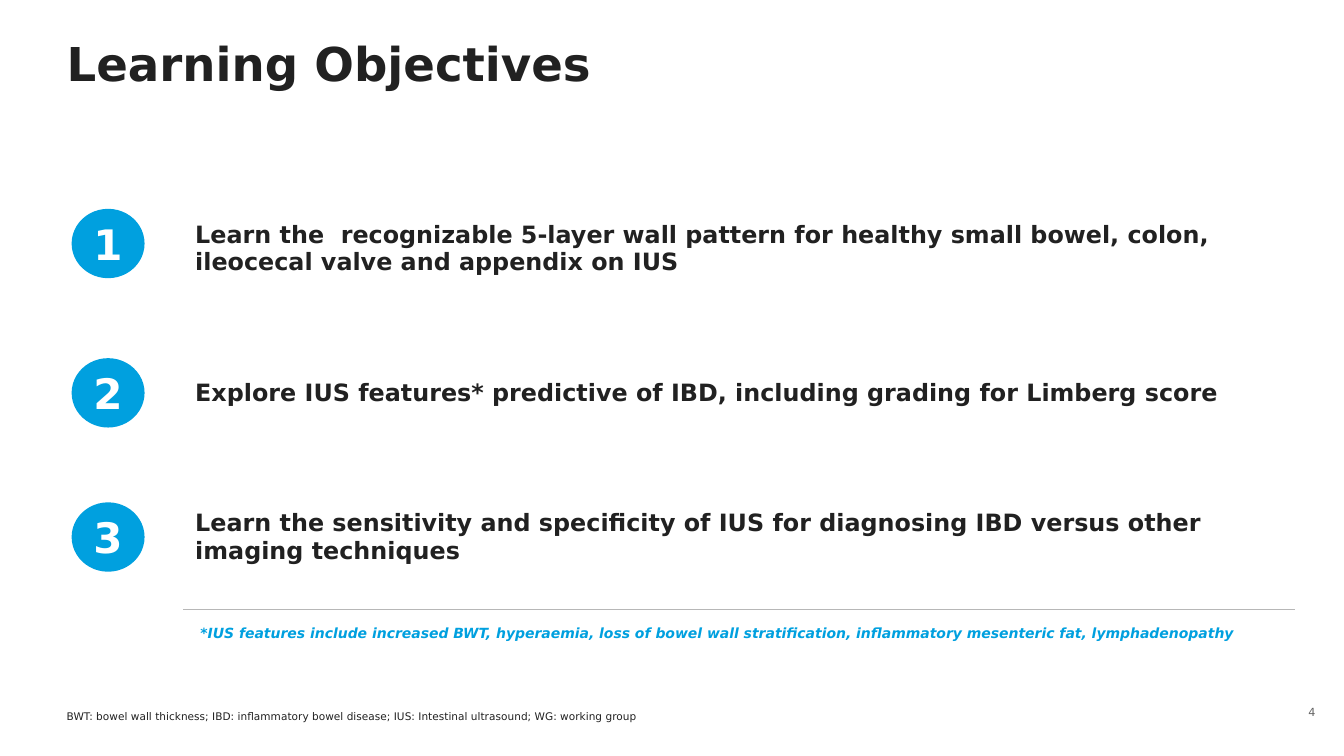
from lxml.etree import SubElement
from pptx import Presentation
from pptx.dml.color import RGBColor
from pptx.enum.shapes import MSO_SHAPE
from pptx.enum.text import MSO_ANCHOR as ANCHOR, PP_ALIGN as ALIGN
from pptx.oxml import parse_xml
from pptx.oxml.ns import nsdecls, qn
from pptx.util import Cm, Pt

FONT = "DejaVu Sans"
INK = RGBColor(0x21, 0x21, 0x21)
BLUE = RGBColor(0x00, 0xA0, 0xDF)
WHITE = RGBColor(0xFF, 0xFF, 0xFF)
PAGE_GREY = RGBColor(0x64, 0x64, 0x64)
RULE_GREY = RGBColor(0xB7, 0xB7, 0xB7)

BADGE_WIDTH, BADGE_HEIGHT = 1.75, 1.66
FIRST_BADGE_LIFT = 0.13

OBJECTIVES = [
    "Learn the  recognizable 5-layer wall pattern for healthy small bowel, colon, "
    "ileocecal valve and appendix on IUS",
    "Explore IUS features* predictive of IBD, including grading for Limberg score",
    "Learn the sensitivity and specificity of IUS for diagnosing IBD versus other "
    "imaging techniques",
]


def write(frame, text, size, color, bold=False, italic=False, align=ALIGN.LEFT):
    frame.text = text
    paragraph = frame.paragraphs[0]
    paragraph.alignment = align
    font = paragraph.runs[0].font
    font.name, font.size, font.bold, font.italic = FONT, Pt(size), bold, italic
    font.color.rgb = color
    return paragraph


def set_insets(target, left=0, top=0, right=0, bottom=0):
    """Set the margins of a text frame or table cell, in centimetres."""
    target.margin_left, target.margin_top = Cm(left), Cm(top)
    target.margin_right, target.margin_bottom = Cm(right), Cm(bottom)


def add_text_frame(slide, box, anchor=ANCHOR.TOP):
    frame = slide.shapes.add_textbox(*map(Cm, box)).text_frame
    frame.word_wrap = True
    frame.vertical_anchor = anchor
    return frame


def set_bottom_rule(cell):
    """Leave the cell with a grey rule below and no other border."""
    properties = cell._tc.get_or_add_tcPr()
    for position, side in enumerate(("lnL", "lnR", "lnT", "lnB")):
        border = parse_xml(f'<a:{side} {nsdecls("a")} w="{Pt(1)}"/>')
        if side == "lnB":
            fill = SubElement(border, qn("a:solidFill"))
            SubElement(fill, qn("a:srgbClr"), val=str(RULE_GREY))
        else:
            SubElement(border, qn("a:noFill"))
        properties.insert(position, border)


def add_title(slide, box):
    frame = add_text_frame(slide, box)
    set_insets(frame)
    write(frame, "Learning Objectives", 33.3, INK, bold=True).line_spacing = 0.9


def add_objectives(slide, box):
    table = slide.shapes.add_table(len(OBJECTIVES), 1, *map(Cm, box)).table
    table.first_row = table.horz_banding = False
    for row, objective in enumerate(OBJECTIVES):
        cell = table.cell(row, 0)
        cell.fill.background()
        cell.vertical_anchor = ANCHOR.MIDDLE
        set_insets(cell, 0.3, 0.1, 0.15, 0.1)
        write(cell.text_frame, objective, 17, INK, bold=True)
        set_bottom_rule(cell)


def add_badges(slide, box):
    """Place one numbered badge beside the middle of each objective."""
    left, top, width, height = box
    row_height = height / len(OBJECTIVES)
    for row in range(len(OBJECTIVES)):
        badge_top = top + (row + 0.5) * row_height - BADGE_HEIGHT / 2
        if row == 0:
            badge_top -= FIRST_BADGE_LIFT
        badge = slide.shapes.add_shape(
            MSO_SHAPE.OVAL, Cm(left + (width - BADGE_WIDTH) / 2), Cm(badge_top),
            Cm(BADGE_WIDTH), Cm(BADGE_HEIGHT))
        badge.shadow.inherit = False
        badge.fill.solid()
        badge.fill.fore_color.rgb = BLUE
        badge.line.color.rgb = BLUE
        badge.line.width = Pt(2.5)
        frame = badge.text_frame
        frame.word_wrap = False
        frame.vertical_anchor = ANCHOR.MIDDLE
        set_insets(frame)
        write(frame, str(row + 1), 30, WHITE, bold=True, align=ALIGN.CENTER)


def add_features_note(slide, box):
    frame = add_text_frame(slide, box)
    write(frame, "*IUS features include increased BWT, hyperaemia, loss of bowel wall "
          "stratification, inflammatory mesenteric fat, lymphadenopathy",
          10, BLUE, bold=True, italic=True)
    frame.word_wrap = False


def add_abbreviations(slide, box):
    frame = add_text_frame(slide, box, ANCHOR.BOTTOM)
    set_insets(frame)
    write(frame, "BWT: bowel wall thickness; IBD: inflammatory bowel disease; "
          "IUS: Intestinal ultrasound; WG: working group", 7.5, INK)


def add_page_number(slide, box):
    frame = add_text_frame(slide, box, ANCHOR.MIDDLE)
    write(frame, "4", 8, PAGE_GREY, align=ALIGN.RIGHT)


def main():
    deck = Presentation()
    deck.slide_width, deck.slide_height = Cm(33.87), Cm(19.05)
    slide = deck.slides.add_slide(deck.slide_layouts[6])
    add_title(slide, (1.68, 1.04, 28.19, 1.27))
    add_objectives(slide, (4.62, 4.45, 28.02, 10.9))
    add_badges(slide, (1.85, 4.45, 1.75, 10.9))
    add_features_note(slide, (4.8, 15.6, 26.92, 0.69))
    add_abbreviations(slide, (1.68, 17.45, 23.29, 0.76))
    add_page_number(slide, (32.33, 17.5, 1.07, 0.91))
    deck.save("out.pptx")


if __name__ == "__main__":
    main()
